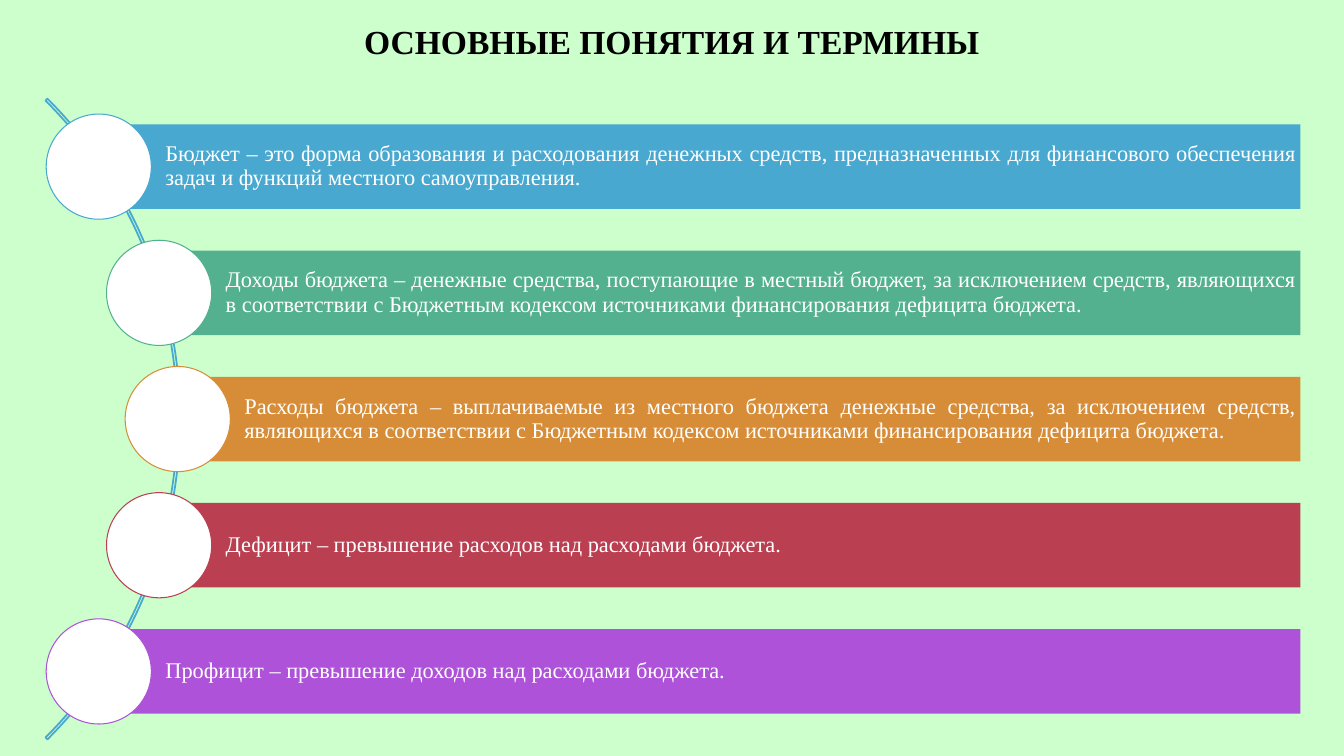
from dataclasses import dataclass

from pptx import Presentation
from pptx.dml.color import RGBColor
from pptx.enum.shapes import MSO_SHAPE as SHAPE
from pptx.enum.text import MSO_ANCHOR as ANCHOR, MSO_AUTO_SIZE as AUTO_SIZE, PP_ALIGN as ALIGN
from pptx.util import Cm, Pt


@dataclass(frozen=True)
class Theme:
    font: str = "Times New Roman"
    background: str = "CCFFCC"
    title: str = "000000"
    white: str = "FFFFFF"
    arc: str = "48A8D0"
    title_size: int = 24
    body_size: int = 16
    arc_width: float = 1.25
    circle_width: float = 0.75


THEME = Theme()
MIDDLE_Y, ROW_STEP = 10.56, 3.18
BAR_RIGHT, BAR_HEIGHT = 32.77, 2.13
CIRCLE_SIZE, ARC_SIZE, ARC_LEFT = 2.65, 22.83, -18.29

TERMS = [
    (2.49, "48A8D0", ALIGN.JUSTIFY,
     "Бюджет – это форма образования и расходования денежных средств, "
     "предназначенных для финансового обеспечения задач и функций местного самоуправления."),
    (4.01, "53B18F", ALIGN.JUSTIFY,
     "Доходы бюджета – денежные средства, поступающие в местный бюджет, "
     "за исключением средств, являющихся в соответствии с Бюджетным кодексом "
     "источниками финансирования дефицита бюджета."),
    (4.48, "D78D38", ALIGN.JUSTIFY,
     "Расходы бюджета – выплачиваемые из местного бюджета денежные средства, "
     "за исключением средств, являющихся в соответствии с Бюджетным кодексом "
     "источниками финансирования дефицита бюджета."),
    (4.01, "BA3F51", ALIGN.LEFT, "Дефицит – превышение расходов над расходами бюджета."),
    (2.49, "AE52D9", ALIGN.LEFT, "Профицит – превышение доходов над расходами бюджета."),
]


def rgb(color):
    return RGBColor.from_string(color)


def add_shape(s, kind, left, top, width, height, fill=None, line=None, line_width=0):
    sp = s.shapes.add_shape(kind, Cm(left), Cm(top), Cm(width), Cm(height))
    sp.shadow.inherit = False
    if fill:
        sp.fill.solid()
        sp.fill.fore_color.rgb = rgb(fill)
    else:
        sp.fill.background()
    if line:
        sp.line.color.rgb = rgb(line)
        sp.line.width = Pt(line_width)
    else:
        sp.line.fill.background()
    return sp


def write(tf, text, size, color, align, bold=False):
    tf.word_wrap = True
    tf.auto_size = AUTO_SIZE.NONE
    tf.vertical_anchor = ANCHOR.MIDDLE
    p = tf.paragraphs[0]
    p.text = text
    p.alignment = align
    p.line_spacing = 0.9
    p.space_before = Pt(0)
    p.font.name = THEME.font
    p.font.size = Pt(size)
    p.font.bold = bold
    p.font.color.rgb = rgb(color)


def add_title(s, text):
    title = s.shapes.title
    title.left, title.top, title.width, title.height = Cm(2.54), Cm(0.36), Cm(28.78), Cm(1.47)
    write(title.text_frame, text, THEME.title_size, THEME.title, ALIGN.CENTER, bold=True)


def add_arc(s):
    arc = add_shape(s, SHAPE.BLOCK_ARC, ARC_LEFT, MIDDLE_Y - ARC_SIZE / 2, ARC_SIZE, ARC_SIZE,
                    line=THEME.arc, line_width=THEME.arc_width)
    for i, value in enumerate((189, 27, 0.003)):
        arc.adjustments[i] = value


def add_term(s, x, y, color, align, text):
    bar = add_shape(s, SHAPE.RECTANGLE, x, y - BAR_HEIGHT / 2, BAR_RIGHT - x, BAR_HEIGHT, color)
    tf = bar.text_frame
    tf.margin_left = Cm(1.68)
    tf.margin_top = tf.margin_right = tf.margin_bottom = Cm(0.1)
    write(tf, text, THEME.body_size, THEME.white, align)
    radius = CIRCLE_SIZE / 2
    add_shape(s, SHAPE.OVAL, x - radius, y - radius, CIRCLE_SIZE, CIRCLE_SIZE,
              THEME.white, color, THEME.circle_width)


def main():
    prs = Presentation()
    prs.slide_width, prs.slide_height = Cm(33.87), Cm(19.05)
    s = prs.slides.add_slide(prs.slide_layouts[5])
    s.background.fill.solid()
    s.background.fill.fore_color.rgb = rgb(THEME.background)
    add_title(s, "ОСНОВНЫЕ ПОНЯТИЯ И ТЕРМИНЫ")
    add_arc(s)
    for i, (x, color, align, text) in enumerate(TERMS):
        add_term(s, x, MIDDLE_Y + (i - 2) * ROW_STEP, color, align, text)
    prs.save("out.pptx")


if __name__ == "__main__":
    main()
